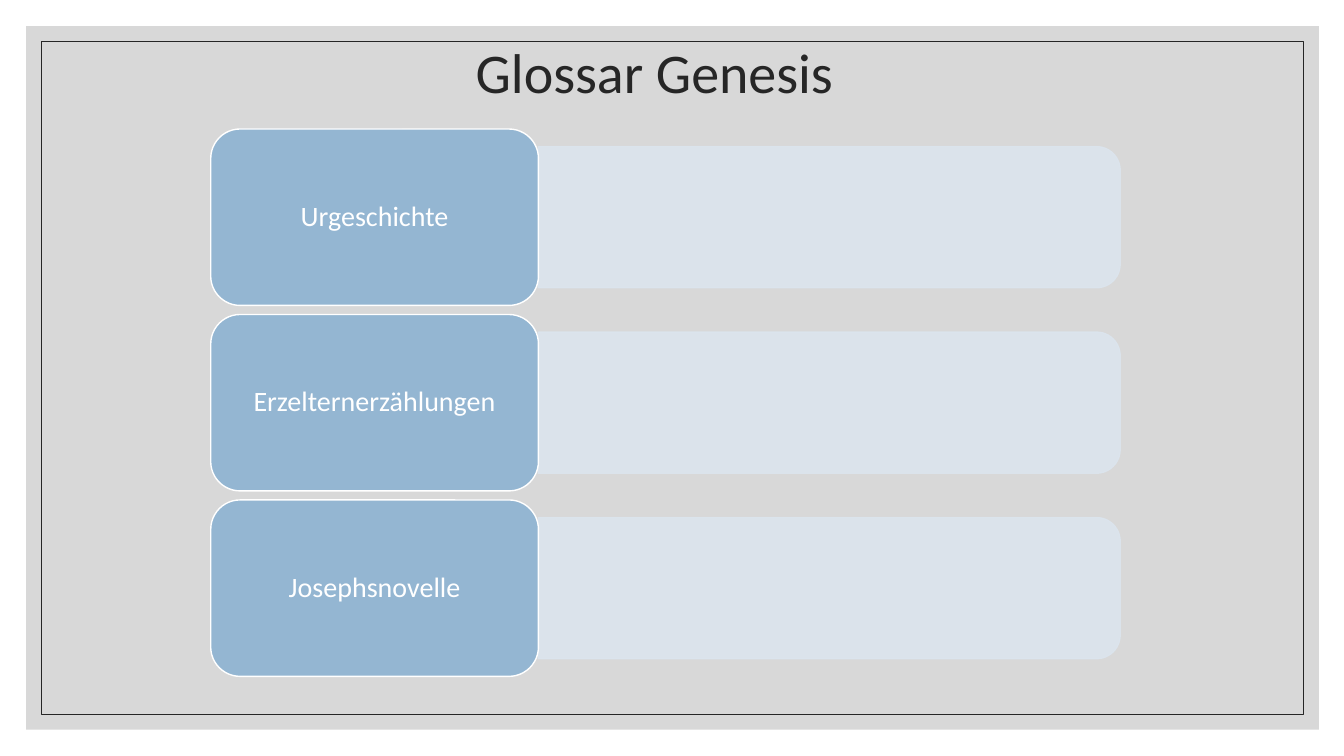
from lxml import etree
from pptx import Presentation
from pptx.dml.color import RGBColor
from pptx.enum.shapes import MSO_SHAPE
from pptx.enum.text import MSO_ANCHOR, PP_ALIGN
from pptx.oxml.ns import qn
from pptx.util import Inches, Pt

RECTANGLE = MSO_SHAPE.RECTANGLE
ROUNDED = MSO_SHAPE.ROUNDED_RECTANGLE
ROUNDED_TOP = MSO_SHAPE.ROUND_2_SAME_RECTANGLE
MIDDLE = MSO_ANCHOR.MIDDLE
CENTER = PP_ALIGN.CENTER

COLORS = {
    "panel": "BFBFBF",
    "dark": "262626",
    "band": "DCE5EE",
    "label": "94B6D2",
    "white": "FFFFFF",
}


def add_box(kind, left, top, width, height, fill=None, line=None, weight=1, opacity=100):
    shape = slide.shapes.add_shape(
        kind, Inches(left), Inches(top), Inches(width), Inches(height))
    shape.shadow.inherit = False
    for target, color in ((shape.fill, fill), (shape.line.fill, line)):
        if color is None:
            target.background()
        else:
            target.solid()
            target.fore_color.rgb = RGBColor.from_string(COLORS[color])
    if line:
        shape.line.width = Pt(weight)
    if opacity < 100:
        for color_element in shape.element.spPr.iter(qn("a:srgbClr")):
            etree.SubElement(color_element, qn("a:alpha"), val=str(opacity * 1000))
    return shape


def write_text(shape, text, size, color, font="Calibri"):
    frame = shape.text_frame
    frame.word_wrap = True
    frame.vertical_anchor = MIDDLE
    paragraph = frame.paragraphs[0]
    paragraph.alignment = CENTER
    paragraph.line_spacing = 0.9
    run = paragraph.add_run()
    run.text = text
    run.font.name = font
    run.font.size = Pt(size)
    run.font.color.rgb = RGBColor.from_string(COLORS[color])


presentation = Presentation()
presentation.slide_width = Inches(13.33)
presentation.slide_height = Inches(7.5)
slide = presentation.slides.add_slide(presentation.slide_layouts[5])

# Grey panel with a thin inner frame
add_box(RECTANGLE, 0.26, 0.26, 12.82, 6.98, fill="panel", opacity=60)
add_box(RECTANGLE, 0.41, 0.41, 12.52, 6.68, line="dark", weight=0.5)

# Title, raised above the panel
title = slide.shapes.title
title.left, title.top = Inches(0.99), Inches(0)
title.width, title.height = Inches(11), Inches(1.5)
write_text(title, "Glossar Genesis", size=40, color="dark")
title.element.getparent().append(title.element)

# Glossary rows: a label and an empty band to its right
LABEL_LEFT, LABEL_WIDTH, LABEL_HEIGHT = 2.09, 3.25, 1.75
BAND_LENGTH, BAND_HEIGHT = 5.77, 1.4
FIRST_TOP, ROW_STEP = 1.28, 1.84

band_center = LABEL_LEFT + LABEL_WIDTH + BAND_LENGTH / 2
terms = ["Urgeschichte", "Erzelternerzählungen", "Josephsnovelle"]
for row, term in enumerate(terms):
    top = FIRST_TOP + row * ROW_STEP
    row_center = top + LABEL_HEIGHT / 2

    # The band stands upright and is turned so its round corners face right
    band = add_box(
        ROUNDED_TOP, band_center - BAND_HEIGHT / 2, row_center - BAND_LENGTH / 2,
        BAND_HEIGHT, BAND_LENGTH, fill="band", line="band", opacity=90)
    band.rotation = 90

    label = add_box(ROUNDED, LABEL_LEFT, top, LABEL_WIDTH, LABEL_HEIGHT,
                    fill="label", line="white")
    write_text(label, term, size=20, color="white")

presentation.save("out.pptx")
